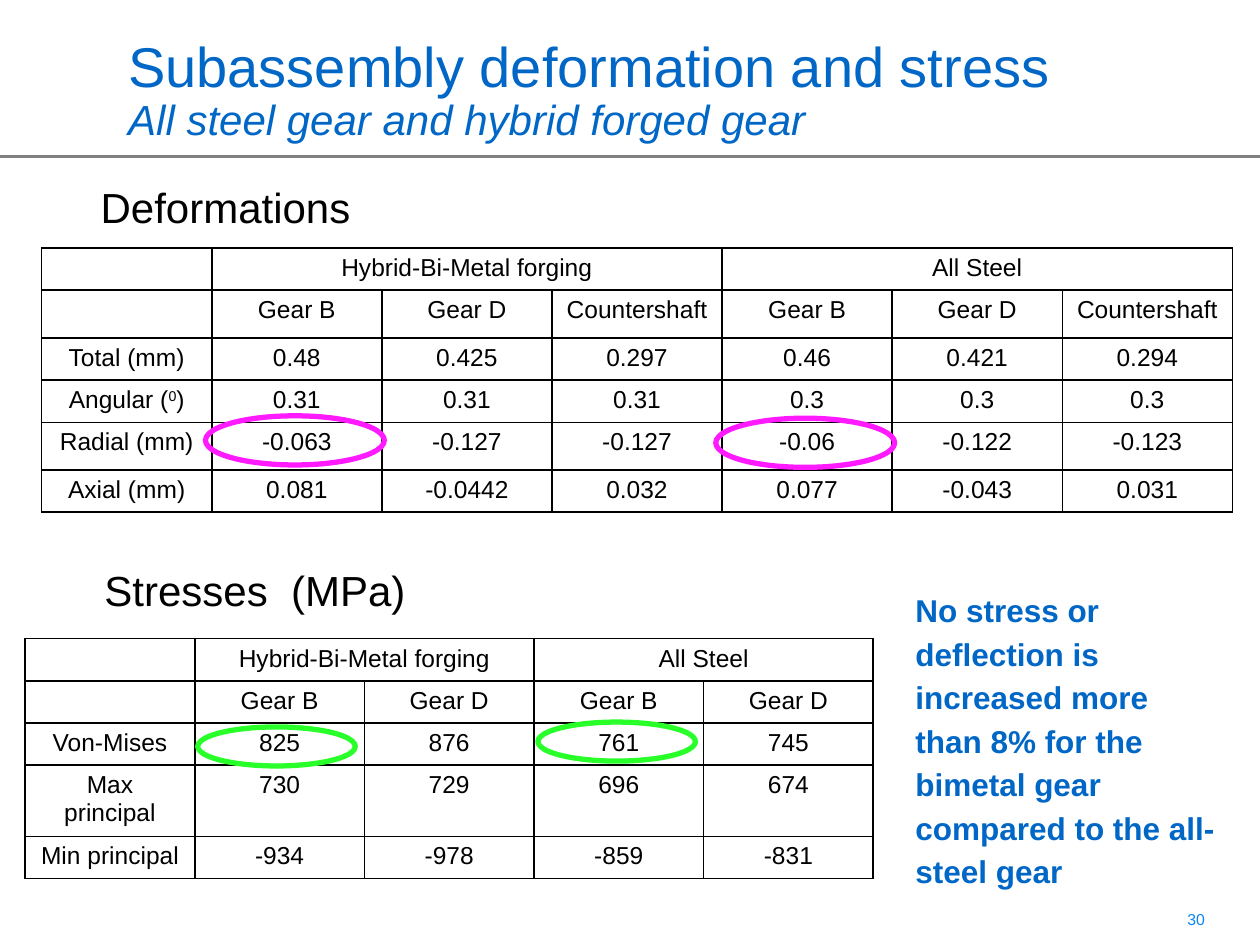
from lxml import etree
from pptx import Presentation
from pptx.dml.color import RGBColor
from pptx.enum.shapes import MSO_CONNECTOR, MSO_SHAPE
from pptx.enum.text import MSO_ANCHOR, PP_ALIGN
from pptx.oxml.ns import qn
from pptx.util import Pt

LEFT, CENTER, RIGHT = PP_ALIGN.LEFT, PP_ALIGN.CENTER, PP_ALIGN.RIGHT
TOP, BOTTOM = MSO_ANCHOR.TOP, MSO_ANCHOR.BOTTOM
STRAIGHT, OVAL = MSO_CONNECTOR.STRAIGHT, MSO_SHAPE.OVAL
FONT = "Arial"
BLUE, BLACK, GRAY = "0067C6", "000000", "808080"
PAGE_BLUE, MAGENTA, GREEN = "0C86F4", "FF1AFF", "29FF29"
GROUPS = ["Hybrid-Bi-Metal forging", "All Steel"]
CELL_SIZE = 14

DEFORMATIONS = [
    [""] + ["Gear B", "Gear D", "Countershaft"] * 2,
    ["Total (mm)", "0.48", "0.425", "0.297", "0.46", "0.421", "0.294"],
    ["Angular (^0^)", "0.31", "0.31", "0.31", "0.3", "0.3", "0.3"],
    ["Radial (mm)", "-0.063", "-0.127", "-0.127", "-0.06", "-0.122", "-0.123"],
    ["Axial (mm)", "0.081", "-0.0442", "0.032", "0.077", "-0.043", "0.031"],
]
STRESSES = [
    [""] + ["Gear B", "Gear D"] * 2,
    ["Von-Mises", "825", "876", "761", "745"],
    ["Max principal", "730", "729", "696", "674"],
    ["Min principal", "-934", "-978", "-859", "-831"],
]


def rgb(value):
    """Turn a hex string into a colour."""
    return RGBColor.from_string(value)


def add_run(paragraph, text, size, color, bold=False, italic=False):
    """Append one formatted run."""
    run = paragraph.add_run()
    run.text = text
    run.font.name, run.font.size = FONT, Pt(size)
    run.font.bold, run.font.italic = bold, italic
    run.font.color.rgb = rgb(color)
    return run


def add_text_box(slide, box, anchor=TOP, align=LEFT, spacing=1.0, wrap=True):
    """Add a text box and return its first paragraph."""
    frame = slide.shapes.add_textbox(*map(Pt, box)).text_frame
    frame.word_wrap = wrap
    frame.vertical_anchor = anchor
    paragraph = frame.paragraphs[0]
    paragraph.alignment, paragraph.line_spacing = align, spacing
    return paragraph


def add_header(slide, left, top, width, height):
    """Place the two-line title and the rule across the slide."""
    title = add_text_box(slide, (left, top, width, height), BOTTOM, spacing=0.9)
    add_run(title, "Subassembly deformation and stress", 32, BLUE)
    title.add_line_break()
    add_run(title, "All steel gear and hybrid forged gear", 24, BLUE, italic=True)
    rule_y = Pt(top + height + 2.9)
    rule = slide.shapes.add_connector(STRAIGHT, Pt(0), rule_y, Pt(720), rule_y)
    rule.line.color.rgb, rule.line.width = rgb(GRAY), Pt(1.5)
    etree.SubElement(rule._element.spPr, qn("a:effectLst"))


def add_heading(slide, left, top, width, height, text):
    """Place a section heading."""
    heading = add_text_box(slide, (left, top, width, height), spacing=1.15, wrap=False)
    add_run(heading, text, 24, BLACK)


def style_cell(cell):
    """Clear the fill and draw thin black borders on a cell."""
    cell.fill.background()
    properties = cell._tc.get_or_add_tcPr()
    for index, side in enumerate(("lnL", "lnR", "lnT", "lnB")):
        border = etree.Element(qn(f"a:{side}"), w=str(Pt(1)))
        fill = etree.SubElement(border, qn("a:solidFill"))
        etree.SubElement(fill, qn("a:srgbClr"), val=BLACK)
        properties.insert(index, border)


def fill_cell(cell, text):
    """Write centred cell text, with parts between carets raised."""
    style_cell(cell)
    paragraph = cell.text_frame.paragraphs[0]
    paragraph.alignment = CENTER
    if not text:
        etree.SubElement(paragraph._p, qn("a:endParaRPr"), sz=str(CELL_SIZE * 100))
        return
    for index, part in enumerate(text.split("^")):
        run = add_run(paragraph, part, CELL_SIZE, BLACK)
        if index % 2:
            run._r.get_or_add_rPr().set("baseline", "30000")


def add_result_table(slide, left, top, width, row_heights, results):
    """Place a table with one group header above each half of its columns."""
    columns = len(results[0])
    span = (columns - 1) // len(GROUPS)
    group_row = [""]
    for group in GROUPS:
        group_row += [group] + [""] * (span - 1)
    rows = [group_row] + results
    table = slide.shapes.add_table(
        len(rows), columns, Pt(left), Pt(top), Pt(width), Pt(sum(row_heights))
    ).table
    table.first_row = table.horz_banding = False
    for column in table.columns:
        column.width = Pt(width / columns)
    for r, (height, texts) in enumerate(zip(row_heights, rows)):
        table.rows[r].height = Pt(height)
        for c, text in enumerate(texts):
            fill_cell(table.cell(r, c), text)
    for start in range(1, columns, span):
        table.cell(0, start).merge(table.cell(0, start + span - 1))


def add_ring(slide, left, top, width, height, color):
    """Circle a highlighted value."""
    ring = slide.shapes.add_shape(OVAL, *map(Pt, (left, top, width, height)))
    ring.shadow.inherit = False
    ring.fill.background()
    ring.line.color.rgb, ring.line.width = rgb(color), Pt(3)


def add_deformations(slide, left, top, width):
    """Place the deformation heading, table and rings."""
    add_heading(slide, left + 26.6, top - 46, 159, 37, "Deformations")
    heights = [22.9, 27.4, 22.9, 22.9, 27.4, 22.9]
    add_result_table(slide, left, top, width, heights, DEFORMATIONS)
    for x, y in ((385.2, 97.2), (93.6, 95.8)):
        add_ring(slide, left + x, top + y, 102.2, 28.1, MAGENTA)


def add_stresses(slide, left, top, width):
    """Place the stress heading, table and rings."""
    add_heading(slide, left + 38.2, top - 50.4, 188, 39.6, "Stresses  (MPa)")
    heights = [22.9, 22.9, 22.9, 38.9, 22.9]
    add_result_table(slide, left, top, width, heights, STRESSES)
    for x, y in ((293, 47.6), (98.6, 50.4)):
        add_ring(slide, left + x, top + y, 90, 22.3, GREEN)


def add_conclusion(slide, left, top, width, height):
    """Place the bold conclusion."""
    conclusion = add_text_box(slide, (left, top, width, height), spacing=1.15)
    add_run(
        conclusion,
        "No stress or deflection is increased more than 8% for the "
        "bimetal gear compared to the all-steel gear",
        18, BLUE, bold=True,
    )


def add_page_number(slide, left, top, width, height):
    """Place the page number."""
    number = add_text_box(slide, (left, top, width, height), align=RIGHT)
    add_run(number, "30", 9, PAGE_BLUE)


def main():
    """Build and save the slide."""
    presentation = Presentation()
    presentation.slide_width, presentation.slide_height = Pt(720), Pt(540)
    slide = presentation.slides.add_slide(presentation.slide_layouts[6])
    add_header(slide, 66.2, 0, 624, 86.4)
    add_deformations(slide, 23.8, 141.8, 680.4)
    add_stresses(slide, 14.4, 365, 484.6)
    add_conclusion(slide, 516, 331.2, 185.8, 173.5)
    add_page_number(slide, 527.8, 516.2, 167.8, 37.4)
    presentation.save("out.pptx")


if __name__ == "__main__":
    main()
